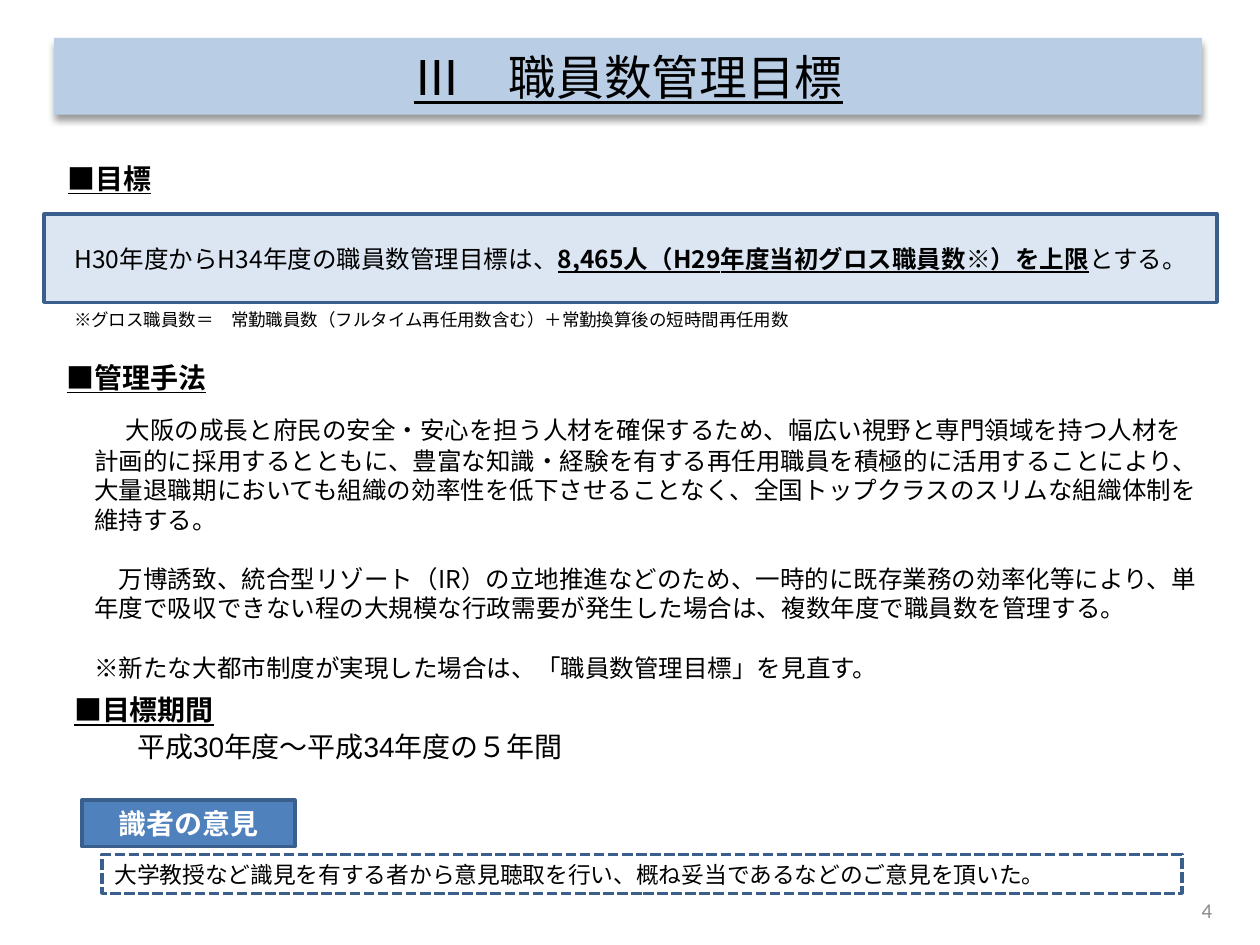
from lxml import etree
from pptx import Presentation
from pptx.dml.color import RGBColor
from pptx.enum.dml import MSO_LINE
from pptx.enum.shapes import MSO_SHAPE
from pptx.enum.text import MSO_ANCHOR, PP_ALIGN
from pptx.oxml.ns import qn
from pptx.util import Inches, Pt

RECTANGLE = MSO_SHAPE.RECTANGLE
DASH = MSO_LINE.SQUARE_DOT
TOP, MIDDLE = MSO_ANCHOR.TOP, MSO_ANCHOR.MIDDLE
LEFT, CENTER, RIGHT = PP_ALIGN.LEFT, PP_ALIGN.CENTER, PP_ALIGN.RIGHT
BLACK = RGBColor(0x00, 0x00, 0x00)
WHITE = RGBColor(0xFF, 0xFF, 0xFF)
GRAY = RGBColor(0x8C, 0x8C, 0x8C)
BANNER_BLUE = RGBColor(0xB9, 0xCD, 0xE5)
PALE_BLUE = RGBColor(0xDC, 0xE6, 0xF2)
LABEL_BLUE = RGBColor(0x4F, 0x81, 0xBD)
BORDER_BLUE = RGBColor(0x3A, 0x5F, 0x8C)
ARIAL, CALIBRI, NOTO = "Arial", "Calibri", "Noto Sans CJK JP"

presentation = Presentation()
presentation.slide_width = Inches(10)
presentation.slide_height = Inches(7.5)
slide = presentation.slides.add_slide(presentation.slide_layouts[6])
COLUMN = presentation.slide_width / 100
ROW = presentation.slide_height / 75


def add_box(area, fill=None, border=None, anchor=TOP):
    left, top, width, height = area
    place = [int(n) for n in (left * COLUMN, top * ROW, width * COLUMN, height * ROW)]
    if fill is None:
        shape = slide.shapes.add_textbox(*place)
    else:
        shape = slide.shapes.add_shape(RECTANGLE, *place)
        shape.shadow.inherit = False
        shape.fill.solid()
        shape.fill.fore_color.rgb = fill
        if border is None:
            shape.line.fill.background()
        else:
            shape.line.color.rgb = border
            shape.line.width = Pt(2)
    shape.text_frame.word_wrap = True
    shape.text_frame.vertical_anchor = anchor
    return shape


def add_run(paragraph, text, size, font, color=BLACK, bold=False, underline=False, align=LEFT):
    paragraph.alignment = align
    run = paragraph.add_run()
    run.text = text
    run.font.size = Pt(size)
    run.font.name = font
    run.font.color.rgb = color
    run.font.bold = bold
    run.font.underline = underline
    east_asian = etree.SubElement(run.font._element, qn("a:ea"))
    east_asian.set("typeface", NOTO)


headings = [
    ("■目標", (4.4, 12.3, 91.1, 11.8), ARIAL),
    ("■目標期間", (4.9, 54.5, 77.1, 6.7), CALIBRI),
    ("■管理手法", (4.3, 28.1, 70.5, 3.7), CALIBRI),
]
sections = {}
for text, area, font in headings:
    sections[text] = add_box(area)
    add_run(sections[text].text_frame.paragraphs[0], text, 16, font, bold=True, underline=True)

period = sections["■目標期間"].text_frame.add_paragraph()
period.space_before = Pt(2)
period._p.get_or_add_pPr().set("marL", str(int(5 * COLUMN)))
add_run(period, "平成30年度～平成34年度の５年間", 16, ARIAL)

banner = add_box((4.3, 3, 91.1, 6.1), BANNER_BLUE, anchor=MIDDLE)
effects = banner._element.spPr.find(qn("a:effectLst"))
shadow = etree.SubElement(effects, qn("a:outerShdw"), blurRad=str(Pt(4)),
                          dist=str(Pt(3)), dir="5400000", rotWithShape="0")
shadow_color = etree.SubElement(shadow, qn("a:srgbClr"), val="000000")
etree.SubElement(shadow_color, qn("a:alpha"), val="40000")
add_run(banner.text_frame.paragraphs[0], "Ⅲ　職員数管理目標", 27.3, CALIBRI,
        underline=True, align=CENTER)

target = add_box((3.5, 17, 93.1, 7), PALE_BLUE, BORDER_BLUE, MIDDLE)
for text, strong in [
    ("H30年度からH34年度の職員数管理目標は、", False),
    ("8,465人（H29年度当初グロス職員数※）を上限", True),
    ("とする。", False),
]:
    add_run(target.text_frame.paragraphs[0], text, 14, NOTO,
            bold=strong, underline=strong, align=CENTER)

footnote = add_box((4.9, 24, 71.7, 2.7))
add_run(footnote.text_frame.paragraphs[0],
        "※グロス職員数＝　常勤職員数（フルタイム再任用数含む）＋常勤換算後の短時間再任用数",
        10, CALIBRI)

method = add_box((6.5, 31.9, 89.8, 20.5))
paragraph = method.text_frame.paragraphs[0]
add_run(paragraph, "　", 18, NOTO)
add_run(paragraph,
        "大阪の成長と府民の安全・安心を担う人材を確保するため、幅広い視野と専門領域を持つ人材を"
        "計画的に採用するとともに、豊富な知識・経験を有する再任用職員を積極的に活用することにより、"
        "大量退職期においても組織の効率性を低下させることなく、全国トップクラスのスリムな組織体制を"
        "維持する。", 14, NOTO)
for text in [
    "　万博誘致、統合型リゾート（IR）の立地推進などのため、一時的に既存業務の効率化等により、"
    "単年度で吸収できない程の大規模な行政需要が発生した場合は、複数年度で職員数を管理する。",
    "※新たな大都市制度が実現した場合は、「職員数管理目標」を見直す。",
]:
    paragraph = method.text_frame.add_paragraph()
    paragraph.space_before = Pt(17)
    add_run(paragraph, text, 14, NOTO)

opinion = add_box((8.1, 67.8, 85.7, 3.1), WHITE, BORDER_BLUE)
opinion.line.dash_style = DASH
add_run(opinion.text_frame.paragraphs[0],
        "大学教授など識見を有する者から意見聴取を行い、概ね妥当であるなどのご意見を頂いた。",
        13, NOTO)

label = add_box((6.5, 63.5, 16.9, 3.7), LABEL_BLUE, BORDER_BLUE, MIDDLE)
add_run(label.text_frame.paragraphs[0], "識者の意見", 16, CALIBRI, WHITE, bold=True, align=CENTER)

page_number = add_box((73.9, 70.2, 23.3, 4), anchor=MIDDLE)
add_run(page_number.text_frame.paragraphs[0], "4", 12, CALIBRI, GRAY, align=RIGHT)

presentation.save("out.pptx")
